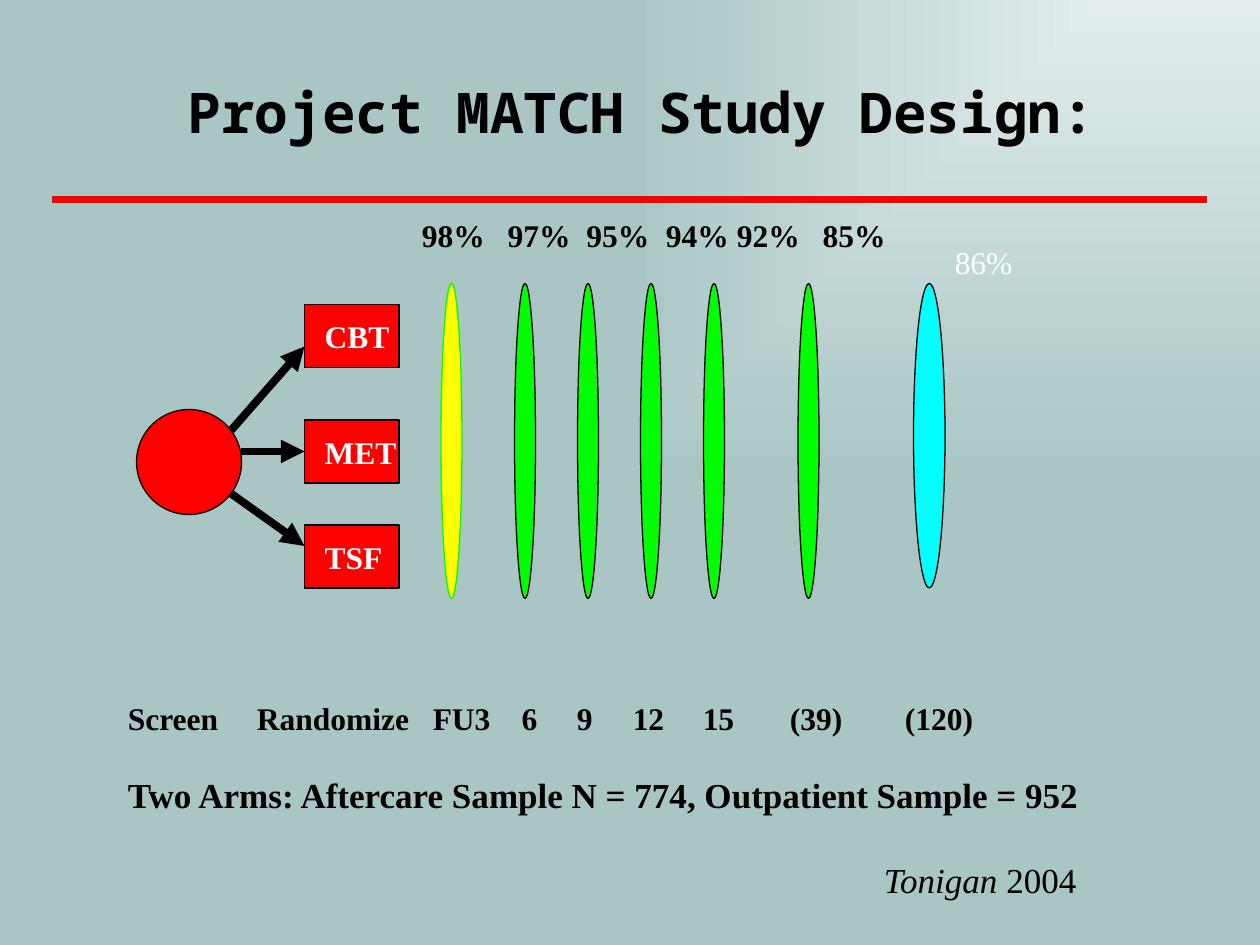
from lxml import etree
from pptx import Presentation
from pptx import util as u
from pptx.dml.color import RGBColor
from pptx.enum import shapes, text
from pptx.oxml import parse_xml
from pptx.oxml.ns import nsdecls, qn

BLACK = RGBColor(0, 0, 0)
WHITE = RGBColor(255, 255, 255)
RED = RGBColor(255, 0, 0)
YELLOW = RGBColor(255, 255, 0)
GREEN = RGBColor(0, 255, 0)
CYAN = RGBColor(0, 255, 255)
PALE = RGBColor(0xE3, 0xED, 0xED)
TEAL = RGBColor(0xA9, 0xC6, 0xC5)

SERIF = "Times New Roman"
HEAVY = {"name": SERIF, "size": u.Pt(18), "bold": True, "color": BLACK}
LARGE = {**HEAVY, "size": u.Pt(20)}
LIGHT = {**LARGE, "bold": False}
TITLE = {"name": "Noto Sans Mono", "size": u.Pt(32), "bold": True, "color": BLACK}

TREATMENTS = [("CBT", 174), ("MET", 240), ("TSF", 300)]
ARROWS = [
    (132, 246, 174, 198),
    (138, 258, 174, 258),
    (132, 282, 174, 312),
]
FOLLOW_UPS = [
    (252, 12, 180, YELLOW, GREEN),
    *[(left, 12, 180, GREEN, BLACK) for left in (294, 330, 366, 402, 456)],
    (522, 18, 174, CYAN, BLACK),
]
RATES = ["98%", "97%", "95%", "94%", "92%", "85%"]
RATE_TABS = [49, 94, 139.5, 180, 229]
STAGES = ["Screen", "Randomize", "FU3", "6", "9", "12", "15", "(39)", "(120)"]
STAGE_TABS = [73.75, 174.25, 225, 256.5, 288.5, 328.5, 378.25, 444]
NOTES = [
    (0, 0, STAGE_TABS, [("\t".join(STAGES), HEAVY)]),
    (20.7, 0, [], [("Two Arms: Aftercare Sample N = 774, Outpatient Sample = 952", LARGE)]),
    (25, 432, [], [("Tonigan ", {**LIGHT, "italic": True}), ("2004", LIGHT)]),
]


def add_spans(para, spans):
    for words, style in spans:
        span = para.add_run()
        span.text = words
        for key, value in style.items():
            if key == "color":
                span.font.color.rgb = value
            else:
                setattr(span.font, key, value)


def set_tabs(para, stops):
    if stops:
        tab_list = etree.SubElement(para._p.get_or_add_pPr(), qn("a:tabLst"))
        for stop in stops:
            etree.SubElement(tab_list, qn("a:tab"), pos=str(u.Pt(stop)), algn="l")


def add_label(page, place, spans, stops=()):
    box = page.shapes.add_textbox(*map(u.Pt, place))
    box.text_frame.word_wrap = True
    para = box.text_frame.paragraphs[0]
    set_tabs(para, stops)
    add_spans(para, spans)
    return box


def add_figure(page, kind, place, fill, line):
    figure = page.shapes.add_shape(kind, *map(u.Pt, place))
    figure.shadow.inherit = False
    figure.fill.solid()
    figure.fill.fore_color.rgb = fill
    figure.line.color.rgb = line
    figure.line.width = u.Pt(0.75)
    return figure


def add_line(page, ends, color, arrow=False):
    line = page.shapes.add_connector(shapes.MSO_CONNECTOR.STRAIGHT, *map(u.Pt, ends))
    line.line.color.rgb = color
    line.line.width = u.Pt(4.5)
    if arrow:
        etree.SubElement(line.line._get_or_add_ln(), qn("a:tailEnd"), type="triangle")
    etree.SubElement(line._element.spPr, qn("a:effectLst"))
    return line


def set_background(page):
    page.background.fill.solid()
    solid = page.background._cSld.find(".//" + qn("a:solidFill"))
    solid.getparent().replace(solid, parse_xml(
        f'<a:gradFill {nsdecls("a")} rotWithShape="0"><a:gsLst>'
        f'<a:gs pos="0"><a:srgbClr val="{PALE}"/></a:gs>'
        f'<a:gs pos="100000"><a:srgbClr val="{TEAL}"/></a:gs></a:gsLst>'
        '<a:path path="rect"><a:fillToRect l="100000" b="100000"/></a:path>'
        '</a:gradFill>'))


def add_title(page):
    title = page.shapes.title
    place = {"left": 36, "top": 18, "width": 661.5, "height": 108}
    for key, value in place.items():
        setattr(title, key, u.Pt(value))
    frame = title.text_frame
    layout = {"auto_size": text.MSO_AUTO_SIZE.NONE, "word_wrap": True,
              "vertical_anchor": text.MSO_ANCHOR.TOP, "margin_top": u.Pt(26.5)}
    for key, value in layout.items():
        setattr(frame, key, value)
    frame.paragraphs[0].alignment = text.PP_ALIGN.CENTER
    add_spans(frame.paragraphs[0], [("Project MATCH Study Design:", TITLE)])


def add_treatments(page):
    oval, rectangle = shapes.MSO_SHAPE.OVAL, shapes.MSO_SHAPE.RECTANGLE
    add_figure(page, oval, (78, 234, 60, 60), RED, BLACK)
    for (name, top), ends in zip(TREATMENTS, ARROWS):
        box = add_figure(page, rectangle, (174, top, 54, 36), RED, BLACK)
        frame = box.text_frame
        layout = {"margin_left": u.Pt(11.5), "margin_right": 0, "word_wrap": False,
                  "vertical_anchor": text.MSO_ANCHOR.MIDDLE}
        for key, value in layout.items():
            setattr(frame, key, value)
        frame.paragraphs[0].alignment = text.PP_ALIGN.LEFT
        add_spans(frame.paragraphs[0], [(name, {**HEAVY, "color": WHITE})])
        arrow = add_line(page, ends, BLACK, arrow=True)
        if ends[3] == top + 18:
            arrow.end_connect(box, 1)


def add_notes(page):
    box = page.shapes.add_textbox(*map(u.Pt, (66, 396, 566, 124)))
    frame = box.text_frame
    frame.word_wrap = True
    for index, (gap, indent, stops, spans) in enumerate(NOTES):
        para = frame.add_paragraph() if index else frame.paragraphs[0]
        para.space_before = u.Pt(gap)
        para._p.get_or_add_pPr().set("marL", str(u.Pt(indent)))
        set_tabs(para, stops)
        add_spans(para, spans)


def main():
    deck = Presentation()
    deck.slide_width, deck.slide_height = u.Pt(720), u.Pt(540)
    page = deck.slides.add_slide(deck.slide_layouts[5])
    set_background(page)
    add_title(page)
    add_treatments(page)
    for left, width, height, fill, line in FOLLOW_UPS:
        add_figure(page, shapes.MSO_SHAPE.OVAL, (left, 162, width, height), fill, line)
    add_notes(page)
    add_label(page, (234, 120, 280, 29), [("\t".join(RATES), HEAVY)], RATE_TABS)
    add_line(page, (30, 114, 690, 114), RED)
    add_label(page, (538.5, 135.5, 48, 29), [("86%", {**HEAVY, "bold": False, "color": WHITE})])
    deck.save("out.pptx")


if __name__ == "__main__":
    main()
